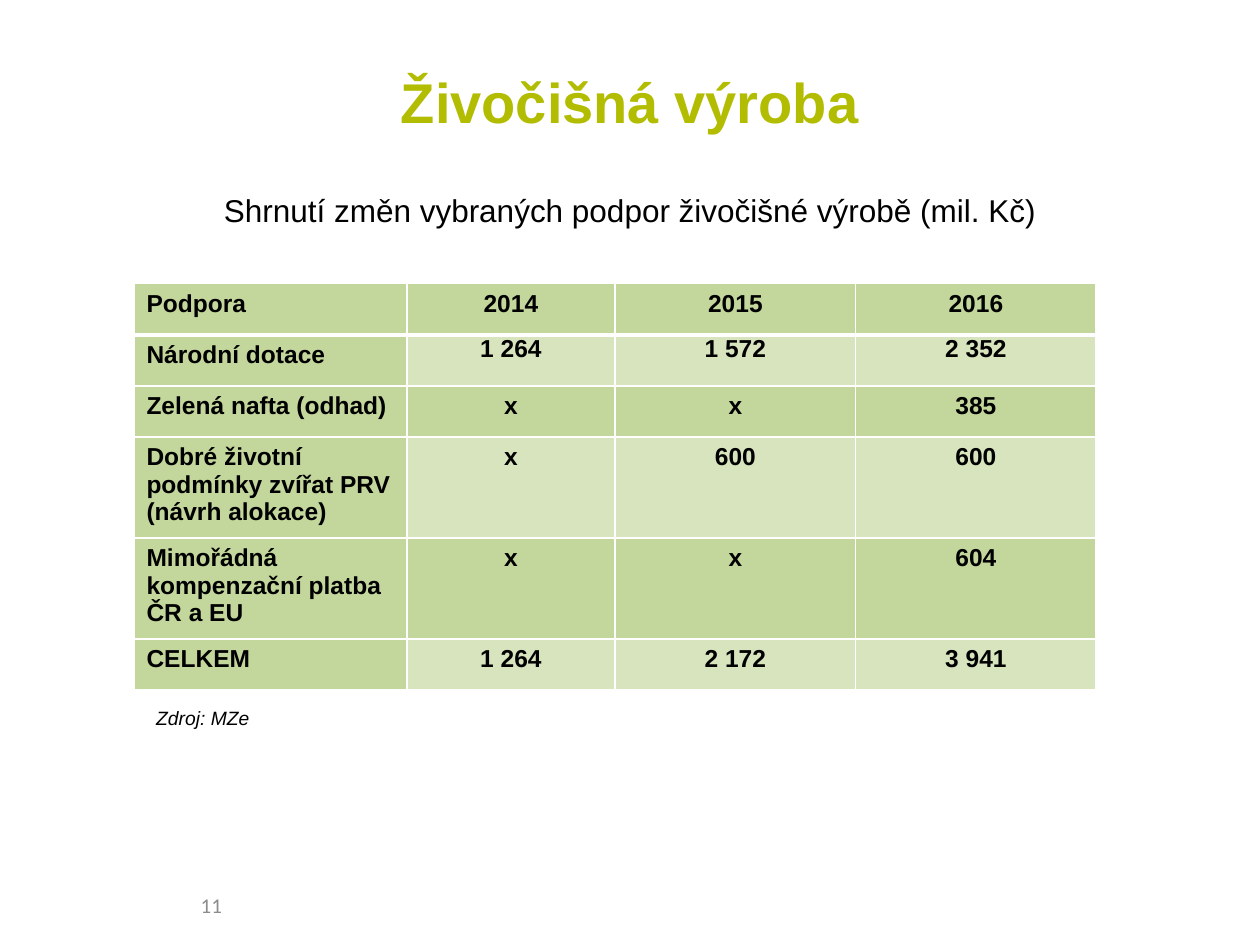
import dataclasses

import lxml.etree
import pptx
import pptx.dml.color
import pptx.enum.text
import pptx.oxml.ns
import pptx.util

Cm = pptx.util.Cm
Pt = pptx.util.Pt
Align = pptx.enum.text.PP_ALIGN
Anchor = pptx.enum.text.MSO_ANCHOR
qn = pptx.oxml.ns.qn

DARK, LIGHT, WHITE = "C3D69B", "D7E4BD", "FFFFFF"


@dataclasses.dataclass
class Label:
    text: str
    box: tuple[float, float, float, float]  # left, top, width, height in cm
    color: str
    font: dict
    align: Align = Align.CENTER
    anchor: Anchor = Anchor.TOP


LABELS = [
    Label("Živočišná výroba", (1.27, 0.76, 22.86, 2.57), "B2BC00",
          {"name": "Arial", "size": Pt(32), "bold": True}, anchor=Anchor.MIDDLE),
    Label("Shrnutí změn vybraných podpor živočišné výrobě (mil. Kč)",
          (1.27, 3.73, 22.86, 13.21), "000000", {"name": "Arial", "size": Pt(18)}),
    Label("Zdroj: MZe", (2.9, 14.12, 3.61, 0.74), "000000",
          {"name": "Arial", "size": Pt(11), "italic": True}, Align.LEFT),
    Label("11", (1.3, 17.73, 5.92, 1.02), "8C8C8C",
          {"name": "Calibri", "size": Pt(12)}, anchor=Anchor.MIDDLE),
]

ROWS = [
    ("Podpora", "2014", "2015", "2016"),
    ("Národní dotace", "1 264", "1 572", "2 352"),
    ("Zelená nafta (odhad)", "x", "x", "385"),
    ("Dobré životní podmínky zvířat PRV (návrh alokace)", "x", "600", "600"),
    ("Mimořádná kompenzační platba ČR a EU", "x", "x", "604"),
    ("CELKEM", "1 264", "2 172", "3 941"),
]
WIDTHS = (5.5, 4.2, 4.85, 4.85)
HEIGHTS = (1.03, 1.03, 1.03, 1.92, 1.92, 1.03)
CELL = {"name": "Arial", "size": Pt(14), "bold": True}


def rgb(code: str) -> pptx.dml.color.RGBColor:
    return pptx.dml.color.RGBColor.from_string(code)


def write(para, text: str, font: dict, color: str, align: Align) -> None:
    para.alignment = align
    run = para.add_run()
    run.text = text
    for key, value in font.items():
        setattr(run.font, key, value)
    run.font.color.rgb = rgb(color)


def add_label(slide, label: Label) -> None:
    frame = slide.shapes.add_textbox(*map(Cm, label.box)).text_frame
    frame.word_wrap = True
    frame.vertical_anchor = label.anchor
    write(frame.paragraphs[0], label.text, label.font, label.color, label.align)


def add_edge(cell, side: str, width: float) -> None:
    props = cell._tc.get_or_add_tcPr()
    line = lxml.etree.SubElement(props, qn(f"a:ln{side}"), w=str(Pt(width)))
    fill = lxml.etree.SubElement(line, qn("a:solidFill"))
    lxml.etree.SubElement(fill, qn("a:srgbClr"), val=WHITE)


def add_grid(slide) -> None:
    frame = slide.shapes.add_table(len(ROWS), len(WIDTHS), Cm(2.7), Cm(5.72),
                                   Cm(sum(WIDTHS)), Cm(sum(HEIGHTS)))
    table = frame.table
    for col, width in zip(table.columns, WIDTHS):
        col.width = Cm(width)
    for row, height in zip(table.rows, HEIGHTS):
        row.height = Cm(height)

    for r, texts in enumerate(ROWS):
        for c, text in enumerate(texts):
            cell = table.cell(r, c)
            # The line below the header is thicker
            for side in "LRTB":
                thick = (r, side) in ((0, "B"), (1, "T"))
                add_edge(cell, side, 3 if thick else 1)
            # Values alternate in shade, the first column stays dark
            cell.fill.solid()
            cell.fill.fore_color.rgb = rgb(LIGHT if c and r % 2 else DARK)
            if r == 1 and c:
                cell.margin_left = cell.margin_right = Cm(0.15)
                cell.margin_top = cell.margin_bottom = Cm(0)
            align = Align.CENTER if c else Align.LEFT
            write(cell.text_frame.paragraphs[0], text, CELL, "000000", align)


def main() -> None:
    deck = pptx.Presentation()
    deck.slide_width, deck.slide_height = Cm(25.4), Cm(19.05)
    slide = deck.slides.add_slide(deck.slide_layouts[6])

    # Title, subtitle, source and page number
    for label in LABELS:
        add_label(slide, label)

    # Table of supports
    add_grid(slide)
    deck.save("out.pptx")


if __name__ == "__main__":
    main()
